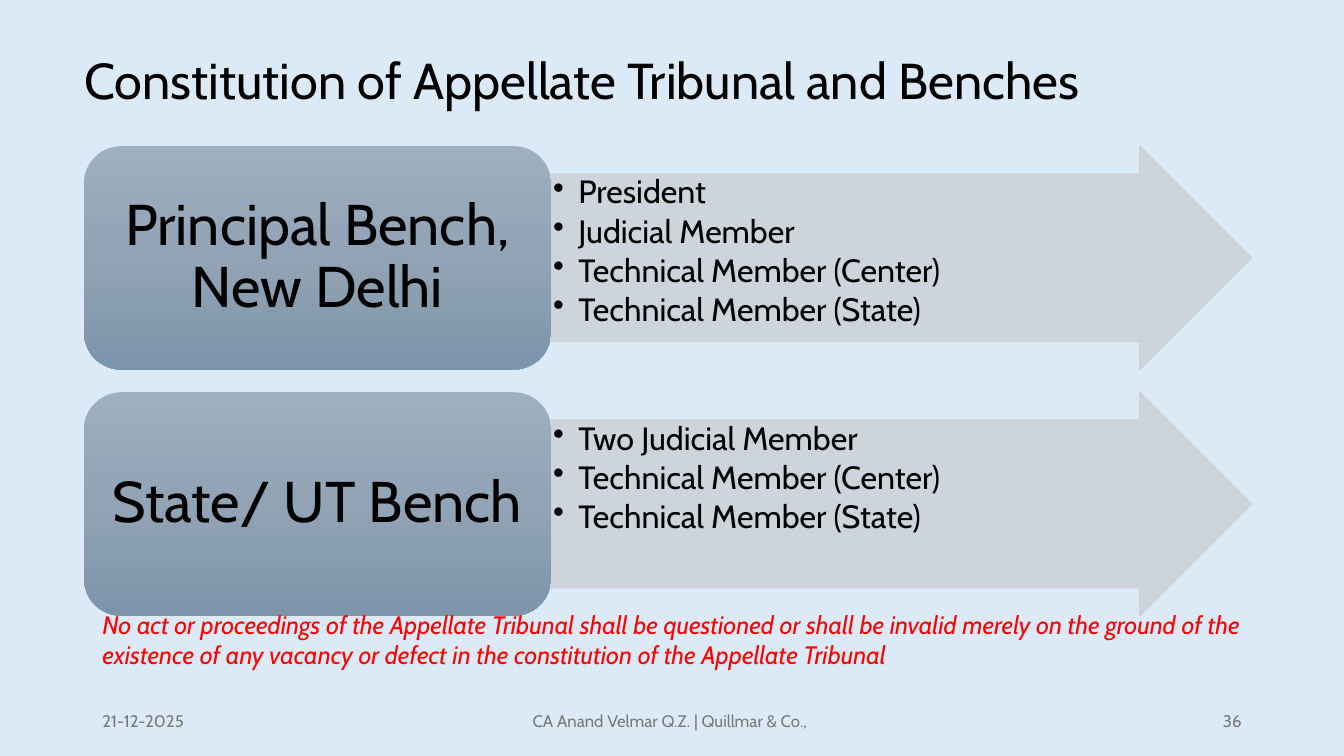
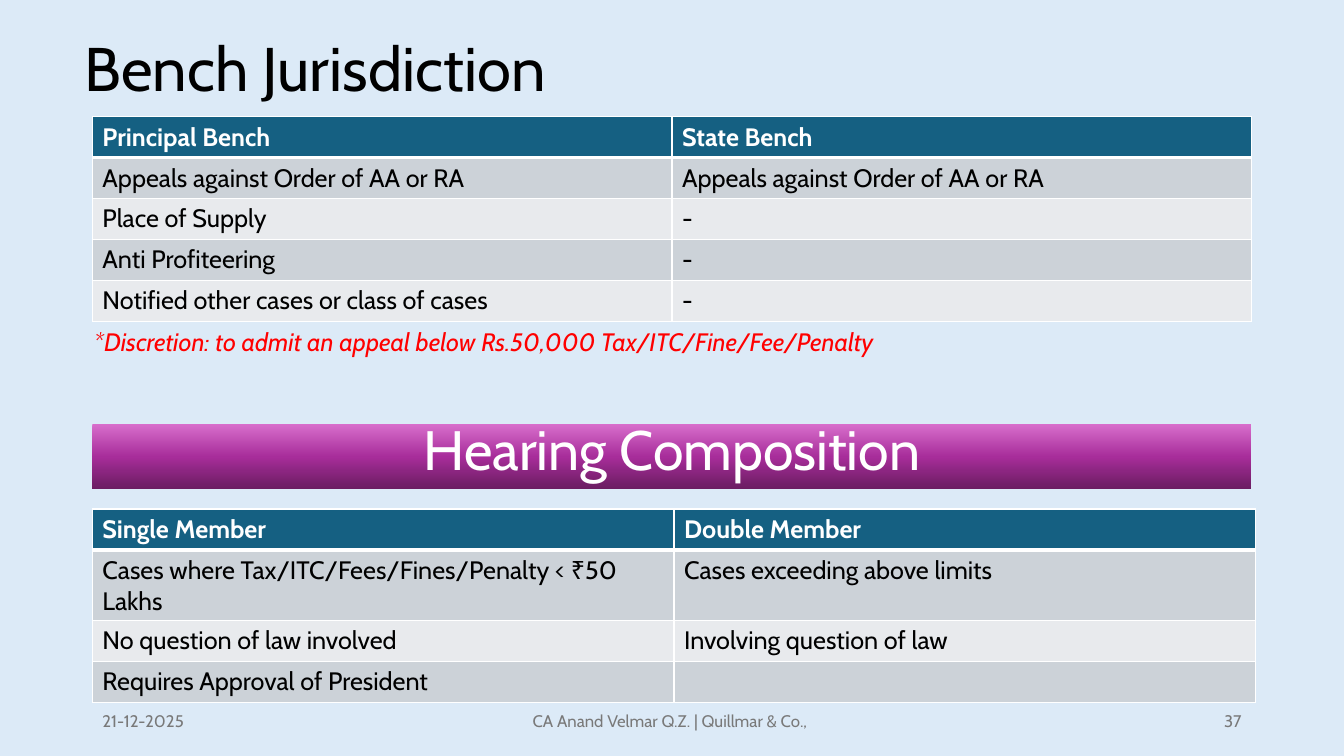
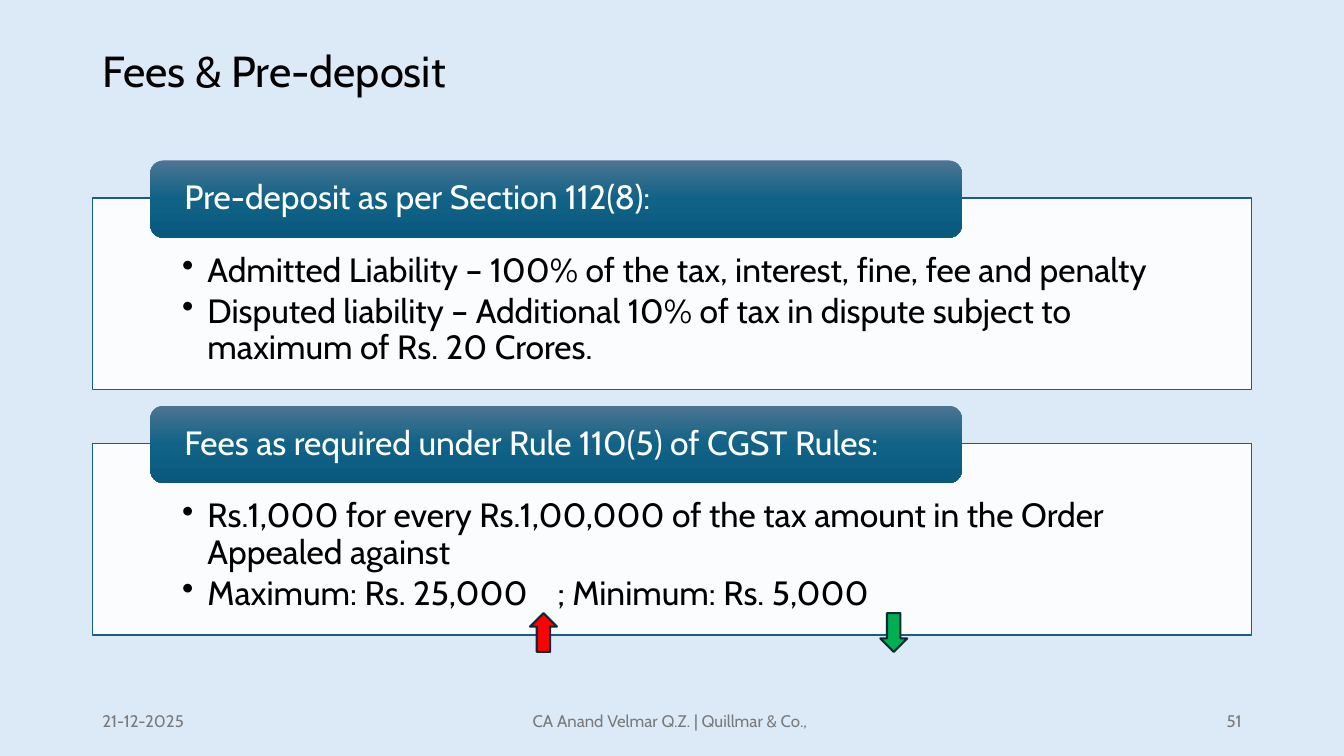
"""Build three slides on the appellate tribunal, its benches, fees and pre-deposit."""
from dataclasses import dataclass
from typing import Optional, Sequence

from lxml.etree import SubElement
from pptx import Presentation
from pptx.dml.color import RGBColor
from pptx.enum.shapes import MSO_SHAPE as Preset
from pptx.enum.text import MSO_ANCHOR as Anchor, PP_ALIGN as Align
from pptx.oxml.ns import qn
from pptx.util import Emu, Pt

COLUMNS, ROWS = 160, 90
UNIT = 914400 / 12
FONT = "Cabin"
MARGIN, CONTENT = 11, 138
BLACK, WHITE, RED, GREEN = "000000", "FFFFFF", "FF0000", "00B050"
SKY, TEAL, NAVY, GREY = "DCEAF7", "156082", "092A39", "797979"
SILVER, MIST = "CCD2D8", "E8EAED"
STEEL_FADE = ("9EAFBF", "91A3B4", "7C95AB")
TEAL_FADE = ("4C7591", "106287", "09597D")
PLUM_FADE = ("D86ECC", "A72D9A", "6B1D62")
DATE = "21-12-2025"
AUTHOR = "CA Anand Velmar Q.Z. | Quillmar & Co., "
GAP_MARK = "~"


@dataclass(frozen=True)
class Box:
    left: float
    top: float
    width: float
    height: float

    def down(self, rows: float) -> "Box":
        return Box(self.left, self.top + rows, self.width, self.height)

    def emu(self) -> list[Emu]:
        return [units(n) for n in (self.left, self.top, self.width, self.height)]


@dataclass(frozen=True)
class Style:
    size: float
    color: str = BLACK
    align: Align = Align.LEFT
    anchor: Anchor = Anchor.MIDDLE
    spacing: float = 1.0
    bold: bool = False
    italic: bool = False
    bullets: bool = False
    insets: Sequence[float] = (1.2, 0.6, 1.2, 0.6)


@dataclass(frozen=True)
class Bench:
    name: str
    members: Sequence[str]


@dataclass(frozen=True)
class Charge:
    heading: str
    terms: Sequence[str]


NOTE = Style(18, RED, anchor=Anchor.TOP, italic=True)
HEADER_CELL = Style(18, WHITE, anchor=Anchor.TOP, bold=True)
BODY_CELL = Style(18, anchor=Anchor.TOP)
BENCH_NAME = Style(41, align=Align.CENTER, spacing=0.9)
MEMBERS = Style(23, anchor=Anchor.TOP, spacing=0.9, bullets=True, insets=(0.25,) * 4)
CHARGE_HEADING = Style(24, WHITE, spacing=0.9, insets=(3.6, 0, 3.6, 0))
TERMS = Style(24, anchor=Anchor.TOP, spacing=0.9, bullets=True,
              insets=(10.7, 6.6, 10.7, 2.3))

BENCHES = (
    Bench("Principal Bench, New Delhi",
          ("President", "Judicial Member", "Technical Member (Center)",
           "Technical Member (State)")),
    Bench("State/ UT Bench",
          ("Two Judicial Member", "Technical Member (Center)",
           "Technical Member (State)")),
)
JURISDICTION = (
    ("Principal Bench", "State Bench"),
    ("Appeals against Order of AA or RA", "Appeals against Order of AA or RA"),
    ("Place of Supply", "-"),
    ("Anti Profiteering", "-"),
    ("Notified other cases or class of cases", "-"),
)
HEARING = (
    ("Single Member", "Double Member"),
    ("Cases where Tax/ITC/Fees/Fines/Penalty < ₹50 Lakhs",
     "Cases exceeding above limits"),
    ("No question of law involved", "Involving question of law"),
    ("Requires Approval of President", ""),
)
CHARGES = (
    Charge("Pre-deposit as per Section 112(8):",
           ("Admitted Liability – 100% of the tax, interest, fine, fee and penalty",
            "Disputed liability – Additional 10% of tax in dispute subject to "
            "maximum of Rs. 20 Crores.")),
    Charge("Fees as required under Rule 110(5) of CGST Rules:",
           ("Rs.1,000 for every Rs.1,00,000 of the tax amount in the Order "
            "Appealed against",
            "Maximum: Rs. 25,000~; Minimum: Rs. 5,000")),
)


def units(count: float) -> Emu:
    return Emu(round(count * UNIT))


def rgb(color: str) -> RGBColor:
    return RGBColor.from_string(color)


def write_runs(paragraph, text: str) -> None:
    for index, part in enumerate(text.split(GAP_MARK)):
        if index:
            gap = paragraph.add_run()
            gap.text = " "
            gap._r.get_or_add_rPr().set("spc", "1600")
        if part:
            paragraph.add_run().text = part


def add_bullet(paragraph) -> None:
    properties = paragraph._p.get_or_add_pPr()
    properties.set("marL", str(units(3)))
    properties.set("indent", str(-units(3)))
    bullet = SubElement(properties, qn("a:buChar"))
    bullet.set("char", "•")
    properties.find(qn("a:defRPr")).addprevious(bullet)


def write(frame, lines: Sequence[str], style: Style) -> None:
    frame.word_wrap = True
    frame.vertical_anchor = style.anchor
    (frame.margin_left, frame.margin_top,
     frame.margin_right, frame.margin_bottom) = map(units, style.insets)
    for index, line in enumerate(lines):
        paragraph = frame.add_paragraph() if index else frame.paragraphs[0]
        write_runs(paragraph, line)
        paragraph.alignment = style.align
        paragraph.line_spacing = style.spacing
        font = paragraph.font
        font.name, font.size, font.color.rgb = FONT, Pt(style.size), rgb(style.color)
        font.bold, font.italic = style.bold, style.italic
        if style.bullets:
            paragraph.space_after = Pt(round(style.size * 0.14, 1))
            add_bullet(paragraph)


def add_text(slide, box: Box, text: str, style: Style) -> None:
    write(slide.shapes.add_textbox(*box.emu()).text_frame, [text], style)


def add_panel(slide, preset: Preset, box: Box, fill: str | Sequence[str],
              line: Optional[str] = None, weight: float = 1, alpha: int = 100):
    panel = slide.shapes.add_shape(preset, *box.emu())
    panel.shadow.inherit = False
    if isinstance(fill, str):
        panel.fill.solid()
        panel.fill.fore_color.rgb = rgb(fill)
        if alpha < 100:
            color = panel._element.spPr.find(f"{qn('a:solidFill')}/{qn('a:srgbClr')}")
            SubElement(color, qn("a:alpha")).set("val", str(alpha * 1000))
    else:
        panel.fill.gradient()
        panel.fill.gradient_angle = 270
        stops = panel._element.spPr.find(f"{qn('a:gradFill')}/{qn('a:gsLst')}")
        for stop in list(stops):
            stops.remove(stop)
        for index, color in enumerate(fill):
            stop = SubElement(stops, qn("a:gs"))
            stop.set("pos", str(100000 * index // (len(fill) - 1)))
            SubElement(stop, qn("a:srgbClr")).set("val", color)
    if line:
        panel.line.color.rgb = rgb(line)
        panel.line.width = Pt(weight)
    else:
        panel.line.fill.background()
    return panel


def style_cell(cell, fill: str, bottom: float) -> None:
    properties = cell._tc.get_or_add_tcPr()
    for side, weight in (("L", 1), ("R", 1), ("T", 1), ("B", bottom)):
        border = SubElement(properties, qn(f"a:ln{side}"))
        border.set("w", str(Pt(weight)))
        paint = SubElement(border, qn("a:solidFill"))
        SubElement(paint, qn("a:srgbClr")).set("val", WHITE)
    cell.fill.solid()
    cell.fill.fore_color.rgb = rgb(fill)


def add_grid(slide, left: float, top: float, width: float,
             heights: Sequence[float], content: Sequence[Sequence[str]]) -> None:
    box = Box(left, top, width, sum(heights))
    table = slide.shapes.add_table(len(content), len(content[0]), *box.emu()).table
    table.horz_banding = False
    for column in table.columns:
        column.width = units(width / len(content[0]))
    for r, (height, texts) in enumerate(zip(heights, content)):
        table.rows[r].height = units(height)
        fill = TEAL if r == 0 else (MIST, SILVER)[r % 2]
        for c, text in enumerate(texts):
            cell = table.cell(r, c)
            style_cell(cell, fill, 3 if r == 0 else 1)
            write(cell.text_frame, [text], BODY_CELL if r else HEADER_CELL)


def start_slide(deck, title: str, box: Box, size: float, number: int):
    slide = deck.slides.add_slide(deck.slide_layouts[6])
    slide.background.fill.solid()
    slide.background.fill.fore_color.rgb = rgb(SKY)
    add_text(slide, box, title, Style(size, spacing=0.9))
    for left, width, text, align in ((MARGIN, 36, DATE, Align.LEFT),
                                     (53, 54, AUTHOR, Align.CENTER),
                                     (113, 36, str(number), Align.RIGHT)):
        add_text(slide, Box(left, 83.4, width, 4.8), text, Style(12, GREY, align))
    return slide


def build_constitution(deck) -> None:
    slide = start_slide(deck, "Constitution of Appellate Tribunal and Benches",
                        Box(8.9, 1.3, CONTENT, 17.3), 36, 36)
    for index, bench in enumerate(BENCHES):
        drop = 29.3 * index
        arrow = add_panel(slide, Preset.RIGHT_ARROW, Box(65.6, 17.4, 83.4, 26.6).down(drop),
                          SILVER, SILVER, alpha=90)
        arrow.adjustments[0], arrow.adjustments[1] = 0.75, 0.5
        write(arrow.text_frame, bench.members, MEMBERS)
        name = add_panel(slide, Preset.ROUNDED_RECTANGLE,
                         Box(10, 17.4, 55.6, 26.6).down(drop), STEEL_FADE)
        write(name.text_frame, [bench.name], BENCH_NAME)
    add_text(slide, Box(MARGIN, 71.9, CONTENT, 8.5),
             "No act or proceedings of the Appellate Tribunal shall be questioned or "
             "shall be invalid merely on the ground of the existence of any vacancy or "
             "defect in the constitution of the Appellate Tribunal", NOTE)


def build_jurisdiction(deck) -> None:
    slide = start_slide(deck, "Bench Jurisdiction", Box(8.9, 3.2, 113, 10.7), 44, 37)
    add_grid(slide, MARGIN, 13.9, CONTENT, [4.87] * 5, JURISDICTION)
    band = add_panel(slide, Preset.RECTANGLE, Box(MARGIN, 50.5, CONTENT, 7.7), PLUM_FADE)
    write(band.text_frame, ["Hearing Composition"],
          Style(39.6, WHITE, Align.CENTER, spacing=0.7))
    add_grid(slide, MARGIN, 60.6, 138.5, [4.87, 8.4, 4.87, 4.87], HEARING)
    add_text(slide, Box(10, 38.3, CONTENT, 4.8),
             "*Discretion: to admit an appeal below Rs.50,000 Tax/ITC/Fine/Fee/Penalty",
             NOTE)


def build_fees(deck) -> None:
    slide = start_slide(deck, "Fees & Pre-deposit", Box(MARGIN, 5.3, CONTENT, 7), 31, 51)
    for index, charge in enumerate(CHARGES):
        drop = 29.2 * index
        card = add_panel(slide, Preset.RECTANGLE, Box(MARGIN, 23.6, CONTENT, 22.8).down(drop),
                         WHITE, TEAL, alpha=90)
        write(card.text_frame, charge.terms, TERMS)
        heading = add_panel(slide, Preset.ROUNDED_RECTANGLE,
                            Box(17.9, 19.1, 96.6, 9.2).down(drop), TEAL_FADE)
        write(heading.text_frame, [charge.heading], CHARGE_HEADING)
    for preset, left, color in ((Preset.UP_ARROW, 63.1, RED),
                                (Preset.DOWN_ARROW, 104.8, GREEN)):
        add_panel(slide, preset, Box(left, 73, 3.2, 4.6), color, NAVY, 1.5)


def main() -> None:
    deck = Presentation()
    deck.slide_width, deck.slide_height = units(COLUMNS), units(ROWS)
    build_constitution(deck)
    build_jurisdiction(deck)
    build_fees(deck)
    deck.save("out.pptx")


if __name__ == "__main__":
    main()
